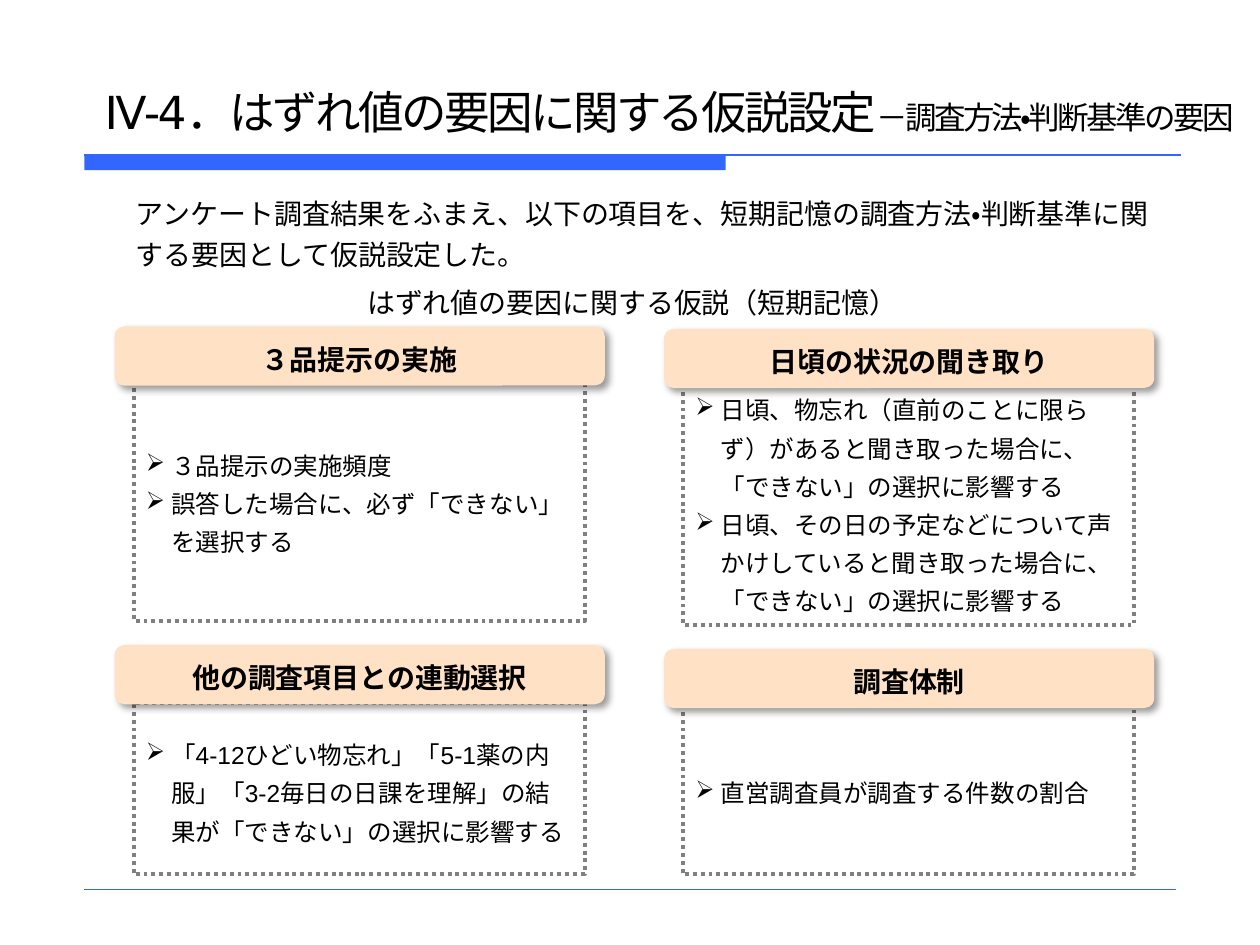
from lxml import etree
from pptx import Presentation
from pptx import util as u
from pptx.dml.color import RGBColor
from pptx.enum import dml, lang, shapes, text
from pptx.oxml import ns

COLORS = {
    "ink": "000000",
    "rule": "3366FF",
    "header": "FFE2C5",
    "panel": "FFFFFF",
    "dots": "808080",
}
COLUMNS = (0.91, 5.27)
HEADER_W, HEADER_H = 3.89, 0.47
PANEL_W, PANEL_INSET = 3.58, 0.15
HANGING = u.Inches(0.2)

CARDS = [
    (0, 2.59, 3.0, 1.93, "middle", "３品提示の実施",
     ["３品提示の実施頻度", "誤答した場合に、必ず「できない」を選択する"]),
    (1, 2.61, 3.02, 1.94, "top", "日頃の状況の聞き取り",
     ["日頃、物忘れ（直前のことに限らず）があると聞き取った場合に、 「できない」の選択に影響する",
      "日頃、その日の予定などについて声かけしていると聞き取った場合に、 「できない」の選択に影響する"]),
    (0, 5.12, 5.58, 1.36, "middle", "他の調査項目との連動選択",
     ["「4-12ひどい物忘れ」「5-1薬の内服」「3-2毎日の日課を理解」の結果が「できない」の選択に影響する"]),
    (1, 5.15, 5.58, 1.36, "middle", "調査体制",
     ["直営調査員が調査する件数の割合"]),
]


def rgb(key):
    return RGBColor.from_string(COLORS[key])


def inches(*lengths):
    return [u.Inches(length) for length in lengths]


def write(shape, paragraphs, font="Arial", bold=False, align="left", anchor="top",
          spacing=1.0, tracking=0, bullet=None, wrap=True):
    frame = shape.text_frame
    frame.word_wrap = wrap
    frame.vertical_anchor = getattr(text.MSO_ANCHOR, anchor.upper())
    for index, runs in enumerate(paragraphs):
        paragraph = frame.add_paragraph() if index else frame.paragraphs[0]
        paragraph.alignment = getattr(text.PP_ALIGN, align.upper())
        paragraph.line_spacing = spacing
        if bullet:
            properties = paragraph._p.get_or_add_pPr()
            properties.set("marL", str(HANGING))
            properties.set("indent", str(-HANGING))
            etree.SubElement(properties, ns.qn("a:buChar"), char=bullet)
        for words, size in runs:
            run = paragraph.add_run()
            run.text = words
            run.font.name = font
            run.font.size = u.Pt(size)
            run.font.bold = bold
            run.font.color.rgb = rgb("ink")
            run.font.language_id = lang.MSO_LANGUAGE_ID.JAPANESE
            if tracking:
                run._r.get_or_add_rPr().set("spc", str(int(tracking * 100)))


def add_block(slide, kind, box, fill):
    block = slide.shapes.add_shape(kind, *inches(*box))
    block.shadow.inherit = False
    block.fill.solid()
    block.fill.fore_color.rgb = rgb(fill)
    block.line.fill.background()
    return block


def add_rule(slide, left, right, y, width):
    rule = slide.shapes.add_connector(shapes.MSO_CONNECTOR.STRAIGHT, *inches(left, y, right, y))
    rule.line.color.rgb = rgb("rule")
    rule.line.width = u.Pt(width)
    etree.SubElement(rule._element.spPr, ns.qn("a:effectLst"))


def add_label(slide, box, runs, **style):
    label = slide.shapes.add_textbox(*inches(*box))
    write(label, [runs], **style)
    return label


def cast_shadow(block):
    effects = block._element.spPr.find(ns.qn("a:effectLst"))
    shadow = etree.SubElement(effects, ns.qn("a:outerShdw"), blurRad=str(u.Pt(4)),
                              dist=str(u.Pt(3)), dir="2700000", algn="tl", rotWithShape="0")
    tint = etree.SubElement(shadow, ns.qn("a:srgbClr"), val=COLORS["ink"])
    etree.SubElement(tint, ns.qn("a:alpha"), val="40000")


def add_card(slide, column, header_top, panel_top, panel_height, anchor, heading, points):
    left = COLUMNS[column]
    panel = add_block(slide, shapes.MSO_SHAPE.RECTANGLE,
                      (left + PANEL_INSET, panel_top, PANEL_W, panel_height), "panel")
    panel.line.color.rgb = rgb("dots")
    panel.line.width = u.Pt(2.25)
    panel.line.dash_style = dml.MSO_LINE.ROUND_DOT
    write(panel, [[(point, 14)] for point in points], anchor=anchor, spacing=1.3, bullet="➢")

    header = add_block(slide, shapes.MSO_SHAPE.ROUNDED_RECTANGLE,
                       (left, header_top, HEADER_W, HEADER_H), "header")
    cast_shadow(header)
    write(header, [[(heading, 16)]], bold=True, align="center", spacing=1.2)


def main():
    deck = Presentation()
    deck.slide_width, deck.slide_height = inches(10, 7.5)
    slide = deck.slides.add_slide(deck.slide_layouts[6])

    add_block(slide, shapes.MSO_SHAPE.RECTANGLE, (0.67, 1.23, 5.09, 0.12), "rule")
    add_rule(slide, 0.67, 9.37, 1.23, 0.75)
    add_rule(slide, 0.67, 9.33, 7.06, 0.25)

    title = add_label(slide, (0.63, 0.33, 9.54, 0.82),
                      [("Ⅳ-4．はずれ値の要因に関する仮説設定", 26), ("－調査方法・判断基準の要因", 18)],
                      font="DejaVu Sans", anchor="bottom", tracking=-1.5, wrap=False)
    title.text_frame.margin_left = u.Inches(0.2)

    for card in CARDS:
        add_card(slide, *card)

    add_label(slide, (0.98, 1.46, 8.28, 0.75),
              [("アンケート調査結果をふまえ、以下の項目を、短期記憶の調査方法・判断基準に関する要因として仮説設定した。", 16)],
              spacing=1.2)
    add_label(slide, (0.88, 2.16, 8.28, 0.42),
              [("はずれ値の要因に関する仮説（短期記憶）", 16)], align="center", spacing=1.2)

    deck.save("out.pptx")


if __name__ == "__main__":
    main()
